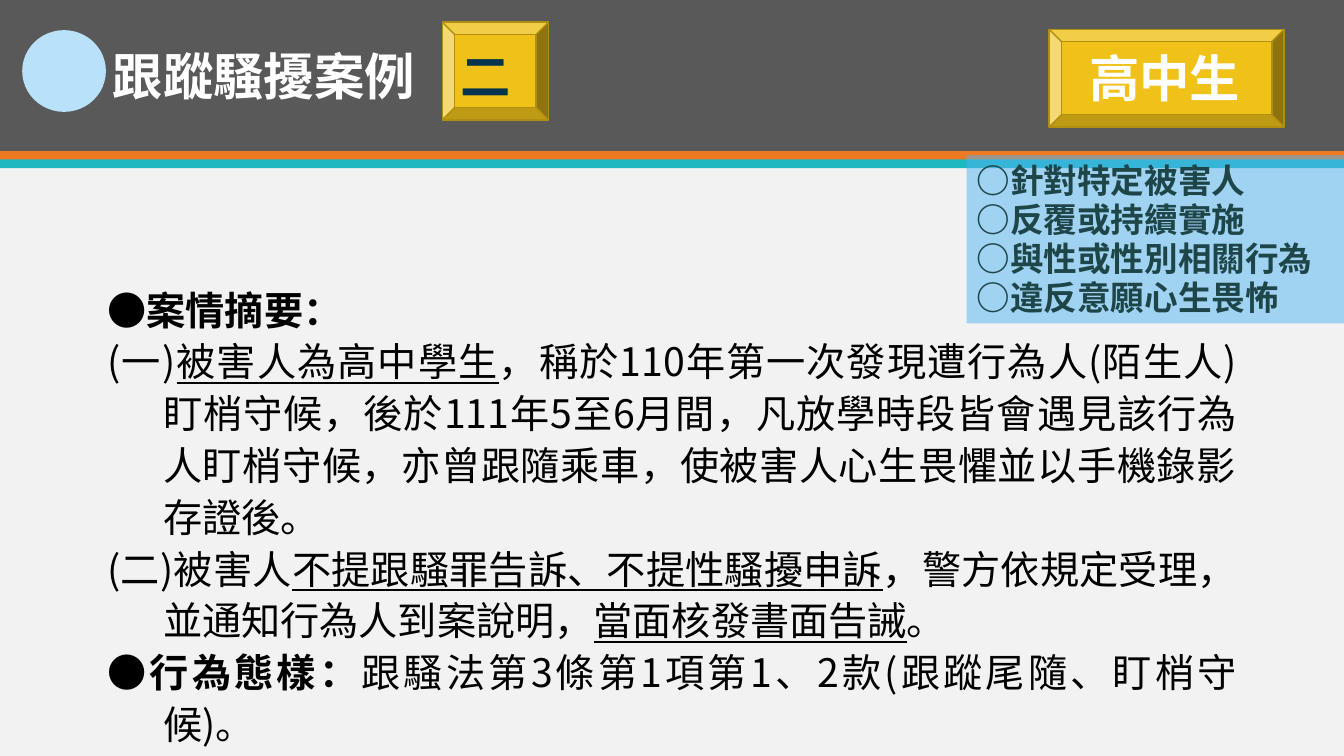
from dataclasses import dataclass

from lxml.etree import SubElement
from pptx import Presentation
from pptx.dml.color import RGBColor
from pptx.enum.shapes import MSO_SHAPE
from pptx.enum.text import MSO_AUTO_SIZE, PP_ALIGN
from pptx.oxml.ns import qn
from pptx.util import Cm, Pt


@dataclass
class Theme:
    font: str = "Noto Sans CJK SC"
    back: str = "F2F2F2"
    band: str = "595959"
    orange: str = "EF7920"
    teal: str = "1EB8C1"
    dot: str = "B9E1FA"
    gold: str = "EFC119"
    edge: str = "B18F12"
    panel: str = "50B4F2"
    white: str = "FFFFFF"
    black: str = "000000"
    navy: str = "06334E"
    green: str = "1E4649"
    title: int = 36
    body: int = 28
    note: int = 24


theme = Theme()


def add_box(kind, left, top, width, height, fill, line=None):
    """Add a filled preset shape, placed in centimetres."""
    box = slide.shapes.add_shape(kind, Cm(left), Cm(top), Cm(width), Cm(height))
    box.shadow.inherit = False
    box.fill.solid()
    box.fill.fore_color.rgb = RGBColor.from_string(fill)
    if line:
        box.line.color.rgb = RGBColor.from_string(line)
        box.line.width = Pt(1)
    else:
        box.line.fill.background()
    return box


def style(run, size, color, bold=True, under=False):
    font = run.font
    font.size, font.bold, font.name = Pt(size), bold, theme.font
    font.underline = under
    font.color.rgb = RGBColor.from_string(color)
    SubElement(run._r.get_or_add_rPr(), qn("a:ea"), typeface=theme.font)


deck = Presentation()
deck.slide_width, deck.slide_height = Cm(33.87), Cm(19.05)
slide = deck.slides.add_slide(deck.slide_layouts[6])
slide.background.fill.solid()
slide.background.fill.fore_color.rgb = RGBColor.from_string(theme.back)

# Header
for top, height, fill in [
    (0, 3.81, theme.band),
    (3.81, 0.22, theme.orange),
    (4.02, 0.22, theme.teal),
]:
    add_box(MSO_SHAPE.RECTANGLE, 0, top, 33.87, height, fill)
add_box(MSO_SHAPE.OVAL, 0.56, 0.76, 2.11, 2.06, theme.dot)
for left, top, width in [(11.15, 0.56, 2.67), (26.44, 0.74, 5.92)]:
    add_box(MSO_SHAPE.BEVEL, left, top, width, 2.46, theme.gold, theme.edge)

for text, left, top, width, color in [
    ("跟蹤騷擾案例", 2.59, 1.02, 8.6, theme.white),
    ("二", 11.36, 1.02, 2.2, theme.navy),
    ("高中生", 27.2, 1.07, 4.72, theme.white),
]:
    label = slide.shapes.add_textbox(Cm(left), Cm(top), Cm(width), Cm(1.8))
    label.text_frame.word_wrap = True
    label.text_frame.text = text
    style(label.text_frame.paragraphs[0].runs[0], theme.title, color)

# Case summary: each run is (text, bold, underlined)
story = [
    [("●案情摘要：", True, False)],
    [
        ("(一)", False, False),
        ("被害人為高中學生", False, True),
        ("，稱於110年第一次發現遭行為人(陌生人)盯梢守候，後於111年5至6月間，"
         "凡放學時段皆會遇見該行為人盯梢守候，亦曾跟隨乘車，"
         "使被害人心生畏懼並以手機錄影存證後。", False, False),
    ],
    [
        ("(二)被害人", False, False),
        ("不提跟騷罪告訴、不提性騷擾申訴", False, True),
        ("，警方依規定受理，並通知行為人到案說明，", False, False),
        ("當面核發書面告誡", False, True),
        ("。", False, False),
    ],
    [
        ("●行為態樣：", True, False),
        ("跟騷法第3條第1項第1、2款(跟蹤尾隨、盯梢守候)。", False, False),
    ],
]
body = slide.shapes.add_textbox(Cm(2.46), Cm(6.96), Cm(28.96), Cm(10.69))
frame = body.text_frame
frame.word_wrap = True
frame.auto_size = MSO_AUTO_SIZE.SHAPE_TO_FIT_TEXT
for i, parts in enumerate(story):
    para = frame.add_paragraph() if i else frame.paragraphs[0]
    para.alignment = PP_ALIGN.JUSTIFY
    para.line_spacing = Pt(37)
    hang = Cm(1.4 if i else 1.65)
    props = para._p.get_or_add_pPr()
    props.set("marL", str(hang))
    props.set("indent", str(-hang))
    for text, bold, under in parts:
        run = para.add_run()
        run.text = text
        style(run, theme.body, theme.black, bold, under)

# Legal criteria
panel = add_box(MSO_SHAPE.RECTANGLE, 24.36, 3.91, 9.51, 4.24, theme.panel)
tint = panel._element.spPr.find(qn("a:solidFill"))[0]
SubElement(tint, qn("a:alpha"), val="50000")
frame = panel.text_frame
frame.word_wrap = True
frame.auto_size = MSO_AUTO_SIZE.SHAPE_TO_FIT_TEXT
frame.text = "\n".join([
    "○針對特定被害人",
    "○反覆或持續實施",
    "○與性或性別相關行為",
    "○違反意願心生畏怖",
])
for para in frame.paragraphs:
    para.alignment = PP_ALIGN.LEFT
    para.line_spacing = Pt(28)
    style(para.runs[0], theme.note, theme.green)
frame.paragraphs[-1].space_after = Pt(6)

deck.save("out.pptx")
